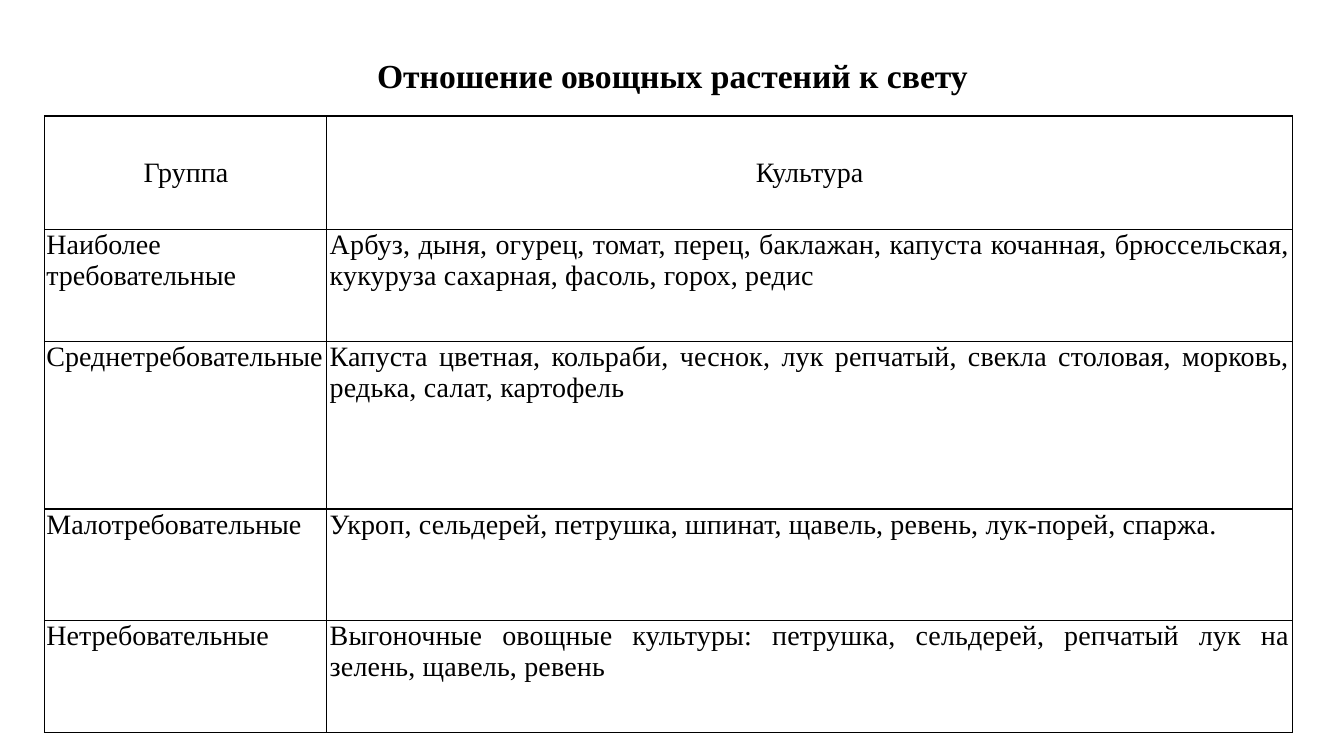
"""Build a slide with a table of vegetable crops grouped by light demand."""
import pptx
import pptx.util
import pptx.dml.color
import pptx.enum.text
import pptx.oxml.ns
import lxml.etree

Inches, Pt = pptx.util.Inches, pptx.util.Pt
ALIGN, ANCHOR = pptx.enum.text.PP_ALIGN, pptx.enum.text.MSO_ANCHOR
COLORS = {"text": "000000", "border": "000000", "background": "FFFFFF"}
FONT = "Times New Roman"
COLUMN_WIDTHS = [2.8, 9.58]
SIDE_MARGINS = [(0.02, 0.01), (0.03, 0.03)]
ROW_HEIGHTS = [1.13, 1.11, 1.66, 1.11, 1.11]
ROWS = [
    ("Группа", "Культура"),
    ("Наиболее требовательные",
     "Арбуз, дыня, огурец, томат, перец, баклажан, капуста кочанная, "
     "брюссельская, кукуруза сахарная, фасоль, горох, редис"),
    ("Среднетребовательные",
     "Капуста цветная, кольраби, чеснок, лук репчатый, свекла столовая, "
     "морковь, редька, салат, картофель"),
    ("Малотребовательные",
     "Укроп, сельдерей, петрушка, шпинат, щавель, ревень, лук-порей, спаржа."),
    ("Нетребовательные",
     "Выгоночные овощные культуры: петрушка, сельдерей, репчатый лук на "
     "зелень, щавель, ревень"),
]


def add_text(p, text, size, align, bold=False, spacing=0):
    p.alignment = align
    r = p.add_run()
    r.text = text
    r.font.name = FONT
    r.font.size = Pt(size)
    r.font.bold = bold
    r.font.color.rgb = pptx.dml.color.RGBColor.from_string(COLORS["text"])
    if spacing:
        r._r.get_or_add_rPr().set("spc", str(spacing))


def add_borders(cell):
    tcPr = cell._tc.get_or_add_tcPr()
    for i, side in enumerate(("lnL", "lnR", "lnT", "lnB")):
        ln = lxml.etree.Element(pptx.oxml.ns.qn(f"a:{side}"), w=str(Pt(1)))
        fill = lxml.etree.SubElement(ln, pptx.oxml.ns.qn("a:solidFill"))
        lxml.etree.SubElement(fill, pptx.oxml.ns.qn("a:srgbClr"), val=COLORS["border"])
        tcPr.insert(i, ln)


prs = pptx.Presentation()
prs.slide_width, prs.slide_height = Inches(13.33), Inches(7.5)
s = prs.slides.add_slide(prs.slide_layouts[5])
s.background.fill.solid()
s.background.fill.fore_color.rgb = pptx.dml.color.RGBColor.from_string(COLORS["background"])

title = s.shapes.title
title.left, title.top = Inches(0.92), Inches(0.4)
title.width, title.height = Inches(11.5), Inches(0.73)
tf = title.text_frame
tf.word_wrap = True
tf.vertical_anchor = ANCHOR.MIDDLE
p = tf.paragraphs[0]
p.line_spacing = 0.9
add_text(p, "Отношение овощных растений к свету", 24, ALIGN.CENTER, bold=True)

table = s.shapes.add_table(
    len(ROWS), len(COLUMN_WIDTHS), Inches(0.44), Inches(1.15),
    Inches(sum(COLUMN_WIDTHS)), Inches(sum(ROW_HEIGHTS))).table
table.first_row = table.horz_banding = False
for column, width in zip(table.columns, COLUMN_WIDTHS):
    column.width = Inches(width)
for row, height in zip(table.rows, ROW_HEIGHTS):
    row.height = Inches(height)

for i, row in enumerate(ROWS):
    for j, text in enumerate(row):
        cell = table.cell(i, j)
        cell.margin_left, cell.margin_right = map(Inches, SIDE_MARGINS[j])
        cell.margin_top = cell.margin_bottom = 0
        cell.vertical_anchor = ANCHOR.TOP if i else ANCHOR.MIDDLE
        cell.fill.background()
        add_borders(cell)
        body_align = ALIGN.JUSTIFY if j else ALIGN.LEFT
        add_text(cell.text_frame.paragraphs[0], text, 20,
                 body_align if i else ALIGN.CENTER,
                 spacing=10 if i and j else 0)

prs.save("out.pptx")
